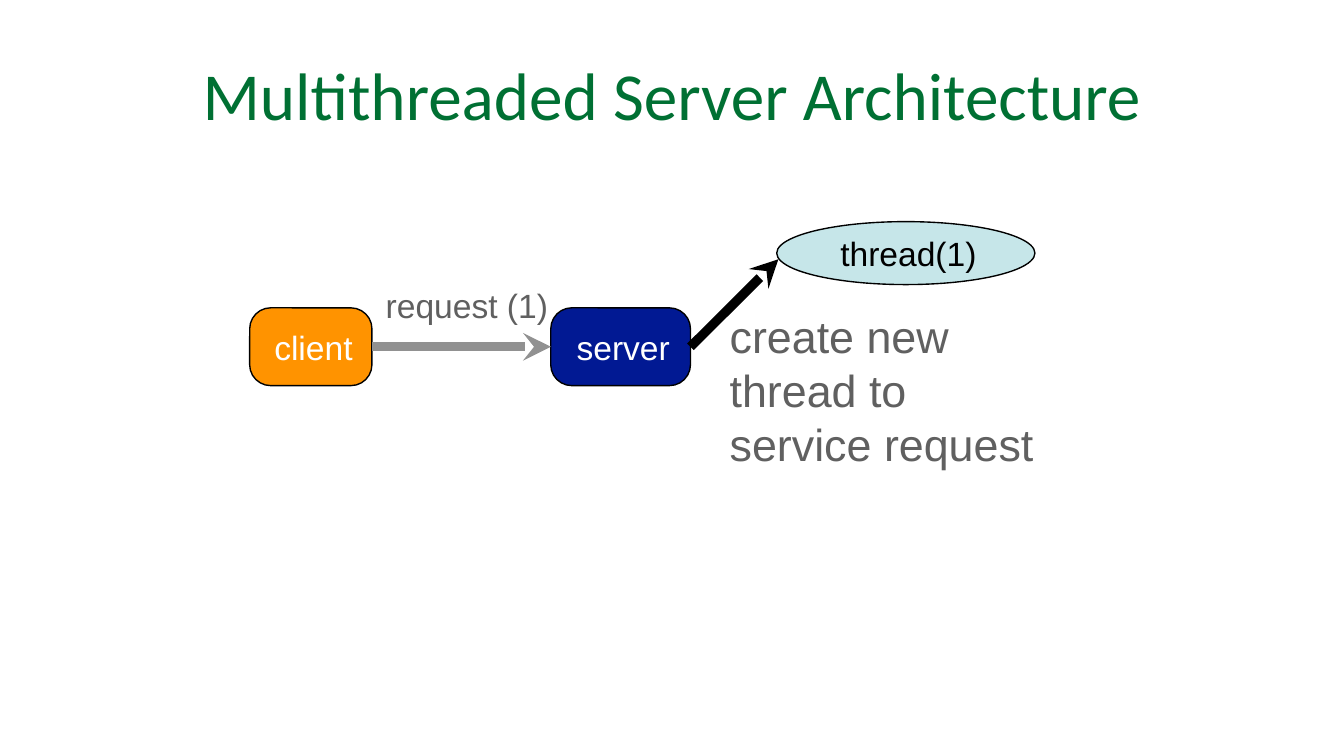
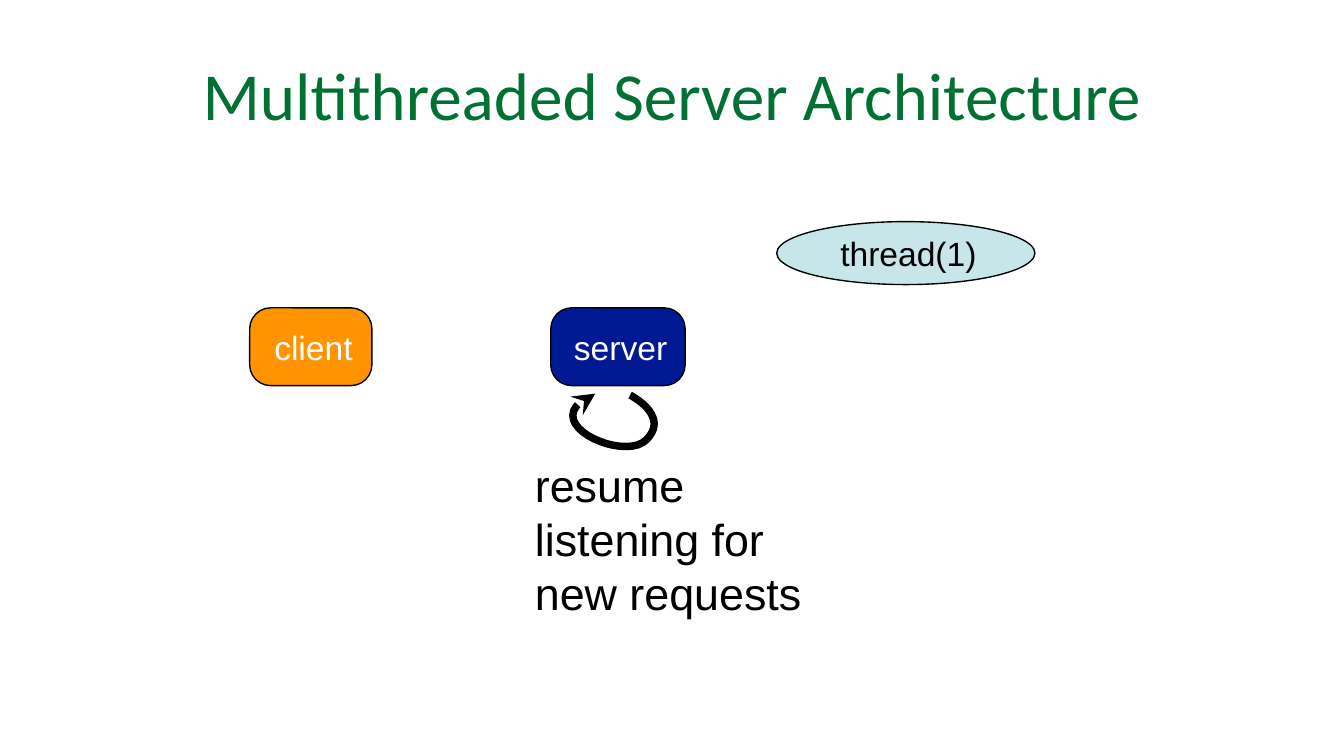
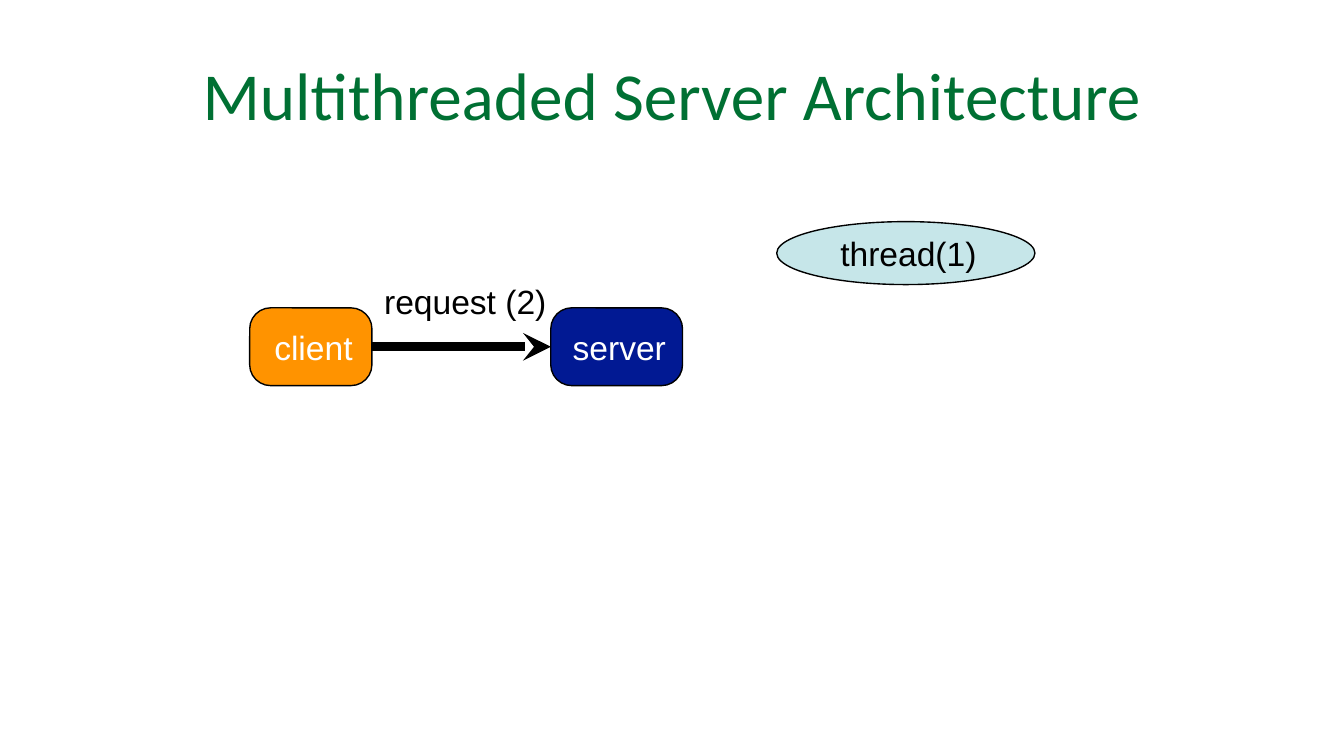
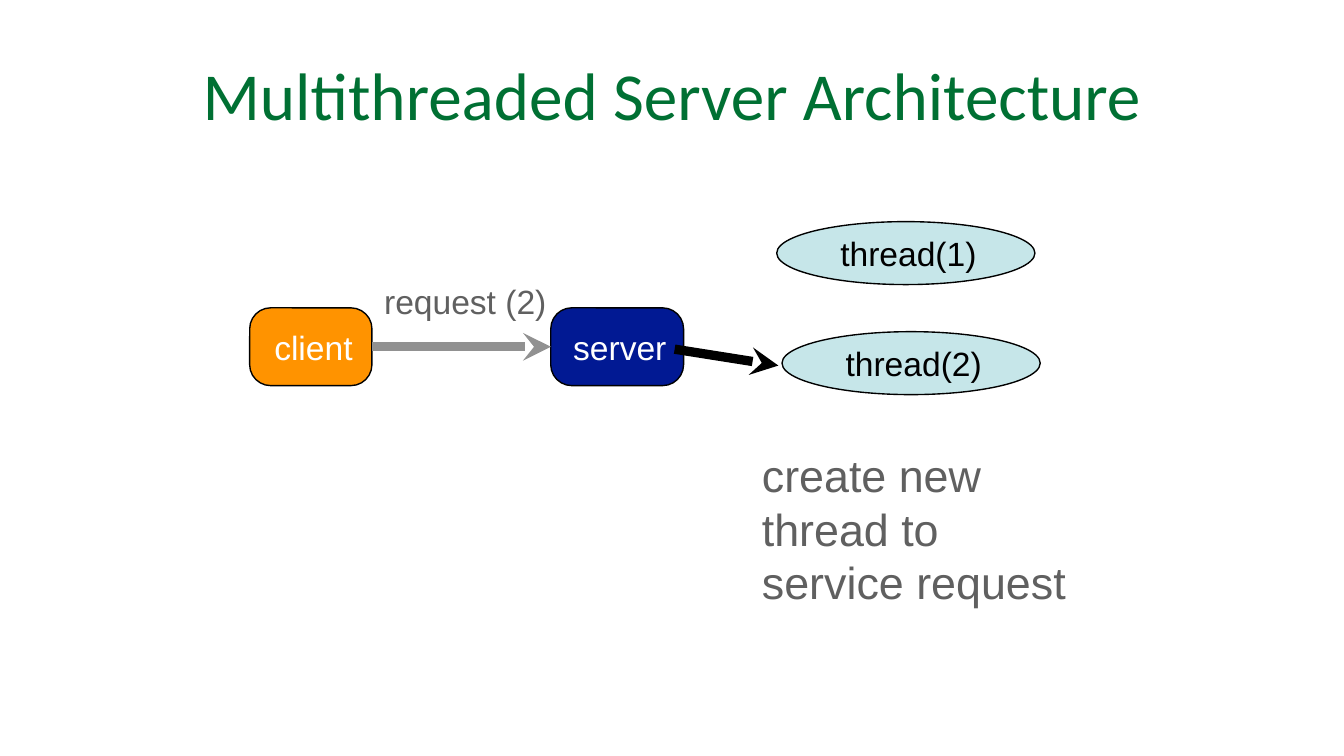
"""Build four slides that step through a multithreaded server."""
from pptx import Presentation
from pptx.dml.color import RGBColor
from pptx.enum.shapes import MSO_CONNECTOR as Wire, MSO_SHAPE as Form
from pptx.enum.text import MSO_ANCHOR as Anchor, MSO_AUTO_SIZE as Fit, PP_ALIGN as Align
from pptx.oxml.ns import qn
from pptx.util import Cm, Pt
from lxml.etree import SubElement as sub

hue = RGBColor.from_string
GREEN, ORANGE, NAVY, PALE = "007033", "FF9300", "011993", "C6E6E9"
BLACK, WHITE, GREY, SILVER = "000000", "FFFFFF", "606060", "919191"
TITLE = "Multithreaded Server Architecture"
CREATE = ["create new thread to", "service request"]
RESUME = ["resume", "listening for", "new requests"]


def write(shape, lines, size, color, align=Align.CENTER, font="Arial", pad=0.1):
    """Fill a shape with one run per paragraph."""
    frame = shape.text_frame
    frame.word_wrap = True
    if pad:
        frame.margin_left = frame.margin_right = Cm(pad)
        frame.margin_top = frame.margin_bottom = Cm(pad)
    for i, line in enumerate(lines):
        para = frame.paragraphs[0] if i == 0 else frame.add_paragraph()
        para.alignment = align
        para._p.get_or_add_pPr().set("marL", str(Cm(pad)))
        run = para.add_run()
        run.text = line
        run.font.size = Pt(size)
        run.font.name = font
        run.font.color.rgb = hue(color)
    return frame


def point(item, color, width):
    """Style a line and put an arrowhead at its end."""
    item.line.color.rgb = hue(color)
    item.line.width = Pt(width)
    sub(item.line._get_or_add_ln(), qn("a:tailEnd"), type="stealth")
    props = item._element.spPr
    if props.find(qn("a:effectLst")) is None:
        sub(props, qn("a:effectLst"))


deck = Presentation()
deck.slide_width, deck.slide_height = Cm(25.4), Cm(14.29)

client = ("client", Form.ROUNDED_RECTANGLE, 4.72, 5.82, 2.31, 1.47, ORANGE, WHITE)
first = ("thread(1)", Form.OVAL, 14.68, 4.19, 4.88, 1.19, PALE, BLACK)
second = ("thread(2)", Form.OVAL, 14.78, 6.27, 4.88, 1.19, PALE, BLACK)

steps = [
    (2.64, [first], ("request (1)", 7.09, 5.28, GREY, SILVER),
     (CREATE, 13.59, 5.74, 6.43, GREY, True)),
    (2.54, [first], None, (RESUME, 9.91, 8.56, 5.49, BLACK, False)),
    (2.49, [first], ("request (2)", 7.06, 5.21, BLACK, BLACK), None),
    (2.51, [first, second], ("request (2)", 7.06, 5.21, GREY, SILVER),
     (CREATE, 14.2, 8.36, 6.43, GREY, True)),
]

slides, servers = [], []
for wide, threads, request, note in steps:
    slide = deck.slides.add_slide(deck.slide_layouts[6])
    slides.append(slide)
    shapes = slide.shapes
    title = shapes.add_textbox(Cm(1.27), Cm(0.58), Cm(22.86), Cm(2.39))
    frame = write(title, [TITLE], 36, GREEN, font="Calibri", pad=0)
    frame.vertical_anchor = Anchor.MIDDLE

    server = ("server", Form.ROUNDED_RECTANGLE, 10.41, 5.82, wide, 1.47, NAVY, WHITE)
    nodes = []
    for name, form, x, y, w, h, fill, ink in [client, server, *threads]:
        node = shapes.add_shape(form, Cm(x), Cm(y), Cm(w), Cm(h))
        node.shadow.inherit = False
        node.fill.solid()
        node.fill.fore_color.rgb = hue(fill)
        node.line.color.rgb = hue(BLACK)
        node.line.width = Pt(0.75)
        if form == Form.ROUNDED_RECTANGLE:
            node.adjustments[0] = 0.27
        write(node, [name], 18, ink).vertical_anchor = Anchor.MIDDLE
        nodes.append(node)
    servers.append(nodes[1])

    if request:
        name, x, y, ink, color = request
        wire = shapes.add_connector(Wire.STRAIGHT, 0, 0, 0, 0)
        wire.begin_connect(nodes[0], 3)
        wire.end_connect(nodes[1], 1)
        point(wire, color, 5)
        label = shapes.add_textbox(Cm(x), Cm(y), Cm(3.53), Cm(0.99))
        frame = write(label, [name], 18, ink, Align.LEFT)
        frame.word_wrap = False
        frame.auto_size = Fit.SHAPE_TO_FIT_TEXT

    if note:
        lines, x, y, w, ink, wrap = note
        label = shapes.add_textbox(Cm(x), Cm(y), Cm(w), Cm(3.3))
        frame = write(label, lines, 24, ink, Align.LEFT)
        frame.word_wrap = wrap
        frame.auto_size = Fit.SHAPE_TO_FIT_TEXT

spawn = slides[0].shapes.add_connector(Wire.STRAIGHT, 0, 0, Cm(14.71), Cm(4.9))
spawn.begin_connect(servers[0], 3)
point(spawn, BLACK, 5)

spawn = slides[3].shapes.add_connector(
    Wire.STRAIGHT, Cm(12.75), Cm(6.6), Cm(14.71), Cm(6.91))
point(spawn, BLACK, 5)

bends = [
    [(11.91, 7.47), (11.91, 7.47), (12.67, 7.85), (12.22, 8.31)],
    [(12.22, 8.31), (11.79, 8.76), (10.03, 7.95), (11.25, 7.44)],
]
dots = []
for bend in bends:
    for i in range(1, 21):
        t = i / 20
        parts = [(1 - t) ** 3, 3 * t * (1 - t) ** 2, 3 * t ** 2 * (1 - t), t ** 3]
        dots.append(tuple(
            Cm(sum(k * spot[axis] for k, spot in zip(parts, bend))) for axis in (0, 1)))
pen = slides[1].shapes.build_freeform(Cm(11.91), Cm(7.47))
pen.add_line_segments(dots, close=False)
loop = pen.convert_to_shape()
loop.fill.background()
point(loop, BLACK, 4)

deck.save("out.pptx")
